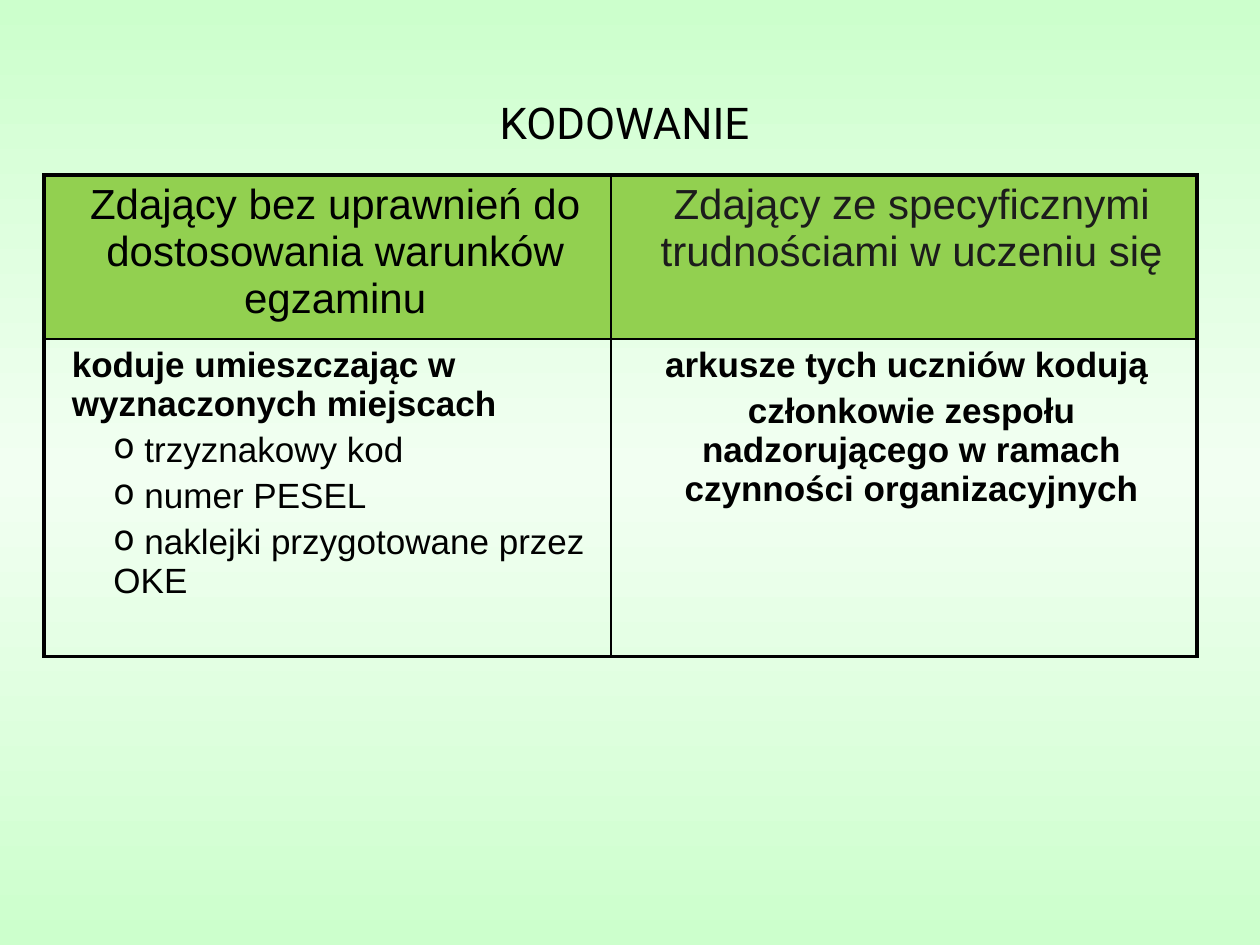
from copy import deepcopy

from lxml import etree
from pptx import Presentation
from pptx.dml.color import RGBColor
from pptx.enum.text import MSO_ANCHOR, PP_ALIGN
from pptx.oxml.ns import qn
from pptx.util import Inches, Pt

CENTER, LEFT = PP_ALIGN.CENTER, PP_ALIGN.LEFT
MIDDLE = MSO_ANCHOR.MIDDLE
BLACK, CHARCOAL, GREEN = "000000", "1C1C1C", "92D050"
MINT, PALE_MINT = "CCFFCC", "F2FFF2"
OUTER, INNER = Pt(2.25), Pt(1)

HEADINGS = [
    ("Zdający bez uprawnień do dostosowania warunków egzaminu", BLACK),
    ("Zdający ze specyficznymi trudnościami w uczeniu się", CHARCOAL),
]
CODING_INTRO = "koduje umieszczając w wyznaczonych miejscach"
CODING_ITEMS = ["trzyznakowy kod", "numer PESEL", "naklejki przygotowane przez OKE"]
TEAM_DUTIES = [
    "arkusze tych uczniów kodują ",
    "członkowie zespołu nadzorującego w ramach czynności organizacyjnych",
]


def color(hex_code):
    """Turn a hex string into a colour."""
    return RGBColor.from_string(hex_code)


def paint_background(slide):
    """Fill the background with a vertical gradient, palest in the middle."""
    fill = slide.background.fill
    fill.gradient()
    fill.gradient_angle = 90
    stops = slide.element.find(".//" + qn("a:gsLst"))
    stops.insert(1, deepcopy(stops[0]))
    for stop, position, shade in zip(fill.gradient_stops, (0, 0.5, 1), (MINT, PALE_MINT, MINT)):
        stop.position = position
        stop.color.rgb = color(shade)


def style(paragraph, size, font_name="Arial", shade=BLACK, bold=False):
    """Set the font of a whole paragraph."""
    font = paragraph.font
    font.name, font.size, font.bold = font_name, Pt(size), bold
    font.color.rgb = color(shade)


def add_title(slide, left, top, width, height):
    """Place the centred slide title."""
    frame = slide.shapes.add_textbox(left, top, width, height).text_frame
    frame.word_wrap = True
    frame.vertical_anchor = MIDDLE
    title = frame.paragraphs[0]
    title.text = "KODOWANIE "
    title.alignment = CENTER
    style(title, 25, "Roboto")


def write_cell(cell, lines, size, align=CENTER, shade=BLACK):
    """Write (text, bold, bulleted) lines into a cell."""
    frame = cell.text_frame
    for number, (text, bold, bulleted) in enumerate(lines):
        paragraph = frame.add_paragraph() if number else frame.paragraphs[0]
        paragraph.text = text
        paragraph.alignment = align
        properties = paragraph._p.get_or_add_pPr()
        properties.set("marL", str(Inches(0.45 if bulleted else 0.12)))
        properties.set("indent", "0")
        if bulleted:
            paragraph.level = 1
            etree.SubElement(properties, qn("a:buChar")).set("char", "o")
        paragraph.space_before = Pt(size * 0.2)
        style(paragraph, size, shade=shade, bold=bold)


def draw_borders(cell, row, column):
    """Draw thick lines on the table's outside and thin lines inside."""
    outside = {"L": column == 0, "R": column == 1, "T": row == 0, "B": row == 1}
    properties = cell._tc.get_or_add_tcPr()
    for side, is_outer in outside.items():
        line = etree.SubElement(properties, qn("a:ln" + side))
        line.set("w", str(OUTER if is_outer else INNER))
        fill = etree.SubElement(line, qn("a:solidFill"))
        etree.SubElement(fill, qn("a:srgbClr")).set("val", BLACK)


def add_coding_table(slide, left, top, width, height):
    """Place the table comparing the two groups of candidates."""
    table = slide.shapes.add_table(2, 2, left, top, width, height).table
    table.first_row = table.horz_banding = False
    table.columns[0].width = Inches(4.5)
    table.columns[1].width = width - Inches(4.5)
    table.rows[0].height = Inches(1.3)
    table.rows[1].height = height - Inches(1.3)
    for row in range(2):
        for column in range(2):
            cell = table.cell(row, column)
            draw_borders(cell, row, column)
            if row == 0:
                cell.fill.solid()
                cell.fill.fore_color.rgb = color(GREEN)
            else:
                cell.fill.background()
    for column, (heading, shade) in enumerate(HEADINGS):
        write_cell(table.cell(0, column), [(heading, False, False)], 24, shade=shade)
    coding = [(CODING_INTRO, True, False)]
    coding += [(" " + item, False, True) for item in CODING_ITEMS]
    write_cell(table.cell(1, 0), coding, 20, LEFT)
    write_cell(table.cell(1, 1), [(duty, True, False) for duty in TEAM_DUTIES], 20)


def main():
    """Build and save the slide."""
    deck = Presentation()
    deck.slide_width, deck.slide_height = Inches(10), Inches(7.5)
    slide = deck.slides.add_slide(deck.slide_layouts[6])
    paint_background(slide)
    add_title(slide, Inches(0.5), Inches(0.34), Inches(9), Inches(1.25))
    add_coding_table(slide, Inches(0.35), Inches(1.39), Inches(9.15), Inches(3.82))
    deck.save("out.pptx")


if __name__ == "__main__":
    main()
